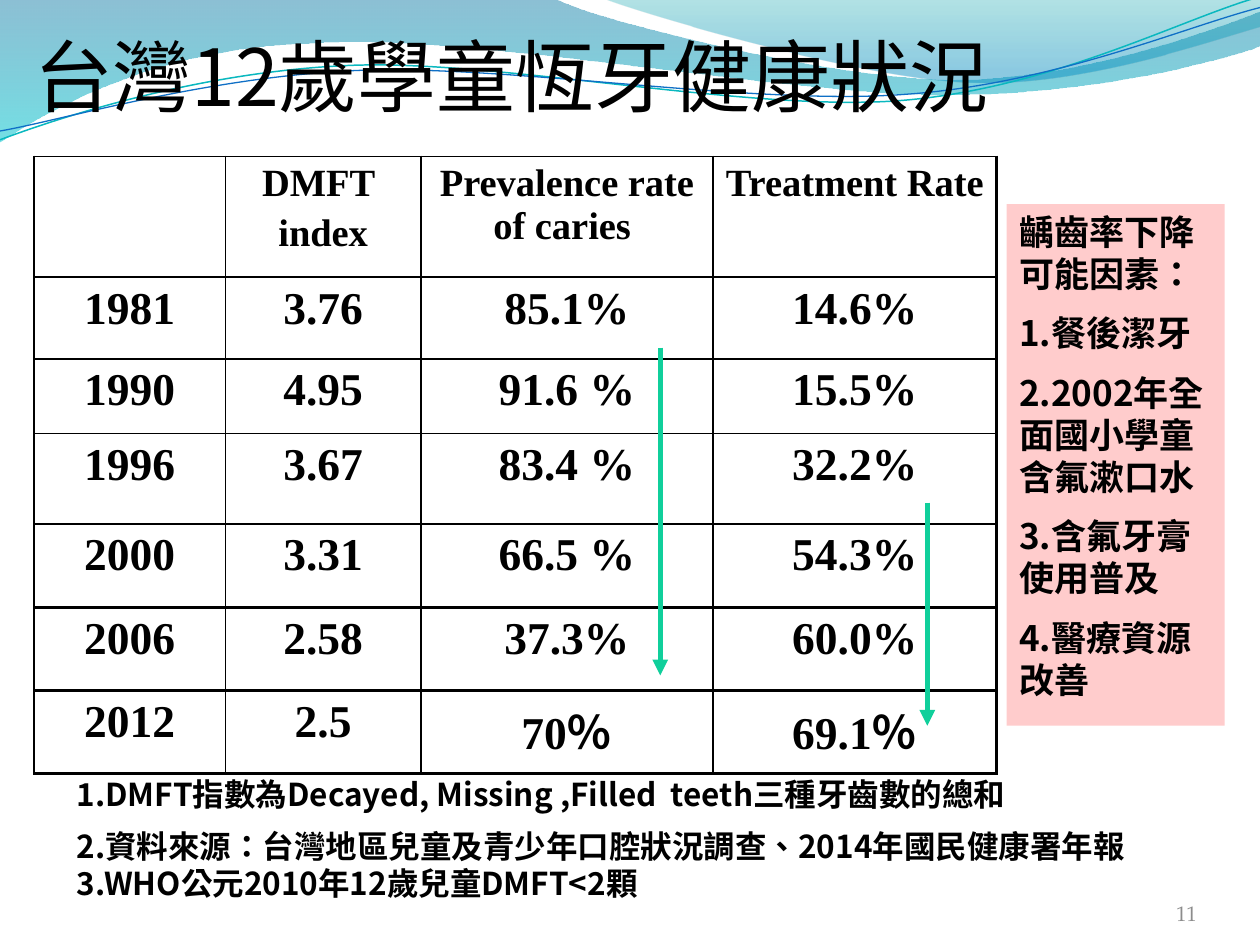
from lxml.etree import SubElement
from pptx import Presentation
from pptx.dml.color import RGBColor
from pptx.enum.shapes import MSO_CONNECTOR, MSO_SHAPE
from pptx.enum.text import MSO_ANCHOR as ANCHOR, PP_ALIGN as ALIGN
from pptx.oxml import parse_xml
from pptx.oxml.ns import nsdecls, qn
from pptx.util import Inches, Pt

BLACK = RGBColor(0x00, 0x00, 0x00)
GRAY = RGBColor(0x8C, 0x8C, 0x8C)
PINK = RGBColor(0xFF, 0xCC, 0xCC)
GREEN = RGBColor(0x10, 0xCF, 0x9B)
TEAL = RGBColor(0x0A, 0xB8, 0xBF)
BLUE = RGBColor(0x0F, 0x6F, 0xC6)
WAVE_BLUE = RGBColor(0x00, 0x74, 0xA1)
WAVE_CYAN = RGBColor(0x00, 0xC6, 0xCF)
CREST_TEAL = RGBColor(0x00, 0xA1, 0xA9)
CREST_BLUE = RGBColor(0x00, 0x8B, 0xBF)
SANS = "Noto Sans CJK SC"
SERIF = "Times New Roman"

ROWS = [
    ["", "DMFT \nindex", "Prevalence rate of caries ", "Treatment Rate"],
    ["1981", "3.76", "85.1%", "14.6%"],
    ["1990", "4.95", "91.6 %", "15.5%"],
    ["1996", "3.67", "83.4 %", "32.2%"],
    ["2000", "3.31", "66.5 %", "54.3%"],
    ["2006", "2.58", "37.3%", "60.0%"],
    ["2012", "2.5", "70％", "69.1％"],
]
COL_WIDTHS = [1.52, 1.55, 2.32, 2.25]
ROW_HEIGHTS = [0.96, 0.65, 0.59, 0.72, 0.66, 0.66, 0.66]

FACTORS = ["齲齒率下降可能因素：", "1.餐後潔牙", "2.2002年全面國小學童含氟漱口水",
           "3.含氟牙膏使用普及", "4.醫療資源改善"]
NOTES = ["1.DMFT指數為Decayed, Missing ,Filled  teeth三種牙齒數的總和",
         "2.資料來源：台灣地區兒童及青少年口腔狀況調查、2014年國民健康署年報",
         "3.WHO公元2010年12歲兒童DMFT<2顆"]

WAVE = [[(0, 0)], [(4.4, -0.01)],
        [(4.76, 0.17), (6.64, 0.63), (7.58, 0.63)],
        [(8.53, 0.63), (9.58, 0.26), (10, 0.09)], [(10.01, 0.36)],
        [(9.83, 0.44), (8.7, 0.76), (7.46, 0.75)],
        [(6.22, 0.75), (3.82, 0.28), (2.57, 0.34)],
        [(1.29, 0.36), (0.46, 0.83), (-0.01, 1.13)], [(0, 0)]]
CREST = [[(4.79, -0.01)],
         [(5.09, 0.11), (6.82, 0.62), (7.69, 0.65)],
         [(8.56, 0.69), (9.61, 0.32), (10, 0.21)], [(10, 0)], [(4.79, -0.01)]]
TEAL_CURVE = [[(0, 1.11)],
              [(0.48, 0.93), (1.58, 0.57), (2.77, 0.52)],
              [(3.95, 0.47), (5.93, 0.89), (7.13, 0.8)],
              [(8.33, 0.71), (9.38, 0.15), (9.98, -0.02)]]
BLUE_CURVE = [[(0, 1.04)],
              [(0.47, 0.96), (1.64, 0.61), (2.83, 0.56)],
              [(4.03, 0.51), (5.97, 0.84), (7.17, 0.75)],
              [(8.36, 0.67), (9.41, 0.21), (10, 0.06)]]


def write(tf, text, size=18, font=SANS, color=BLACK, bold=False,
          align=ALIGN.LEFT, leading=None, gaps=()):
    for i, line in enumerate(text.split("\n")):
        p = tf.add_paragraph() if i else tf.paragraphs[0]
        p.alignment = align
        if leading:
            p.line_spacing = Pt(leading)
        if i and i <= len(gaps):
            p.space_before = Pt(gaps[i - 1])
        r = p.add_run()
        r.text = line
        r.font.name, r.font.size, r.font.bold = font, Pt(size), bold
        r.font.color.rgb = color
        r.font._element.set("lang", "zh-TW")
        SubElement(r.font._element, qn("a:ea"), typeface=SANS)


def set_insets(tf, insets):
    (tf.margin_left, tf.margin_top,
     tf.margin_right, tf.margin_bottom) = map(Inches, insets)


class SlideBuilder:
    def __init__(self, prs):
        self.slide = prs.slides.add_slide(prs.slide_layouts[6])
        self.shapes = self.slide.shapes

    def outline(self, segments, closed):
        points = [(Inches(x), Inches(y)) for segment in segments for x, y in segment]
        builder = self.shapes.build_freeform(*points[0], scale=1.0)
        builder.add_line_segments(points[1:], close=closed)
        sp = builder.convert_to_shape()
        sp.shadow.inherit = False
        steps = iter(list(sp._element.iter(qn("a:lnTo"))))
        for segment in segments[1:]:
            first, *others = [next(steps) for _ in segment]
            if others:
                bezier = parse_xml(f'<a:cubicBezTo {nsdecls("a")}/>')
                first.addprevious(bezier)
                for step in (first, *others):
                    bezier.append(step[0])
                    step.getparent().remove(step)
        return sp

    def wave(self, segments, stops):
        sp = self.outline(segments, True)
        sp.line.fill.background()
        sp.fill.gradient()
        sp.fill.gradient_angle = 270
        for stop, (position, color, _) in zip(sp.fill.gradient_stops, stops):
            stop.position, stop.color.rgb = position, color
        colors = list(sp._element.spPr.iter(qn("a:srgbClr")))
        for element, (_, _, opacity) in zip(colors, stops):
            SubElement(element, qn("a:alpha"), val=str(opacity * 1000))

    def curve(self, segments, color, width):
        sp = self.outline(segments, False)
        sp.fill.background()
        sp.line.color.rgb, sp.line.width = color, Pt(width)

    def text(self, x, y, w, h, text, anchor=ANCHOR.TOP, insets=(0.1, 0.05, 0.1, 0.05),
             **style):
        sp = self.shapes.add_textbox(Inches(x), Inches(y), Inches(w), Inches(h))
        tf = sp.text_frame
        tf.word_wrap, tf.vertical_anchor = True, anchor
        set_insets(tf, insets)
        write(tf, text, **style)

    def panel(self, x, y, w, h, fill, text, **style):
        sp = self.shapes.add_shape(MSO_SHAPE.RECTANGLE, Inches(x), Inches(y),
                                   Inches(w), Inches(h))
        sp.shadow.inherit = False
        sp.fill.solid()
        sp.fill.fore_color.rgb = fill
        sp.line.fill.background()
        tf = sp.text_frame
        tf.word_wrap, tf.vertical_anchor = True, ANCHOR.TOP
        set_insets(tf, (0.1, 0.05, 0.05, 0.05))
        write(tf, text, **style)

    def down_arrow(self, x, top, bottom):
        line = self.shapes.add_connector(MSO_CONNECTOR.STRAIGHT, Inches(x), Inches(top),
                                         Inches(x), Inches(bottom))
        line.line.color.rgb, line.line.width = GREEN, Pt(3)
        SubElement(line.line._get_or_add_ln(), qn("a:tailEnd"), type="triangle")
        SubElement(line._element.spPr, qn("a:effectLst"))

    def table(self, x, y, widths, heights, rows):
        tbl = self.shapes.add_table(len(rows), len(widths), Inches(x), Inches(y),
                                    Inches(sum(widths)), Inches(sum(heights))).table
        tbl.first_row = tbl.horz_banding = False
        for col, w in zip(tbl.columns, widths):
            col.width = Inches(w)
        for row, h in zip(tbl.rows, heights):
            row.height = Inches(h)
        for i, row in enumerate(rows):
            for j, text in enumerate(row):
                cell = tbl.cell(i, j)
                cell.fill.background()
                self.borders(cell, L=1, R=2.25 if j == len(row) - 1 else 1,
                             T=2.25 if i >= 5 else 1, B=2.25 if i >= 4 else 1)
                if text:
                    write(cell.text_frame, text, size=26 if i else 22, font=SERIF,
                          bold=True, align=ALIGN.CENTER, gaps=[4])

    def borders(self, cell, **widths):
        for n, (side, width) in enumerate(widths.items()):
            cell._tc.get_or_add_tcPr().insert(n, parse_xml(
                f'<a:ln{side} {nsdecls("a")} w="{Pt(width)}"><a:solidFill>'
                f'<a:srgbClr val="{BLACK}"/></a:solidFill></a:ln{side}>'))


def main():
    prs = Presentation()
    prs.slide_width, prs.slide_height = Inches(10), Inches(7.5)
    s = SlideBuilder(prs)
    s.wave(WAVE, [(0, WAVE_BLUE, 45), (1, WAVE_CYAN, 55)])
    s.wave(CREST, [(0, CREST_TEAL, 30), (0.8, CREST_BLUE, 45)])
    s.curve(TEAL_CURVE, TEAL, 0.85)
    s.curve(BLUE_CURVE, BLUE, 0.75)
    s.table(0.27, 1.24, COL_WIDTHS, ROW_HEIGHTS, ROWS)
    s.text(0.27, 0.21, 8.98, 0.76, "台灣12歲學童恆牙健康狀況", size=45,
           anchor=ANCHOR.BOTTOM, insets=(0, 0.05, 0, 0))
    s.down_arrow(7.36, 3.99, 5.76)
    s.text(0.51, 6.11, 8.74, 1.16, "\n".join(NOTES), bold=True, leading=21, gaps=[9])
    s.down_arrow(5.24, 2.76, 5.36)
    s.panel(7.99, 1.62, 1.73, 4.14, PINK, "\n".join(FACTORS), size=20, bold=True,
            leading=24, gaps=[10] * 4)
    s.text(8.67, 6.95, 0.83, 0.4, "11", size=12, font="TeX Gyre Pagella", color=GRAY,
           align=ALIGN.RIGHT, anchor=ANCHOR.BOTTOM, insets=(0, 0, 0, 0))
    prs.save("out.pptx")


if __name__ == "__main__":
    main()
